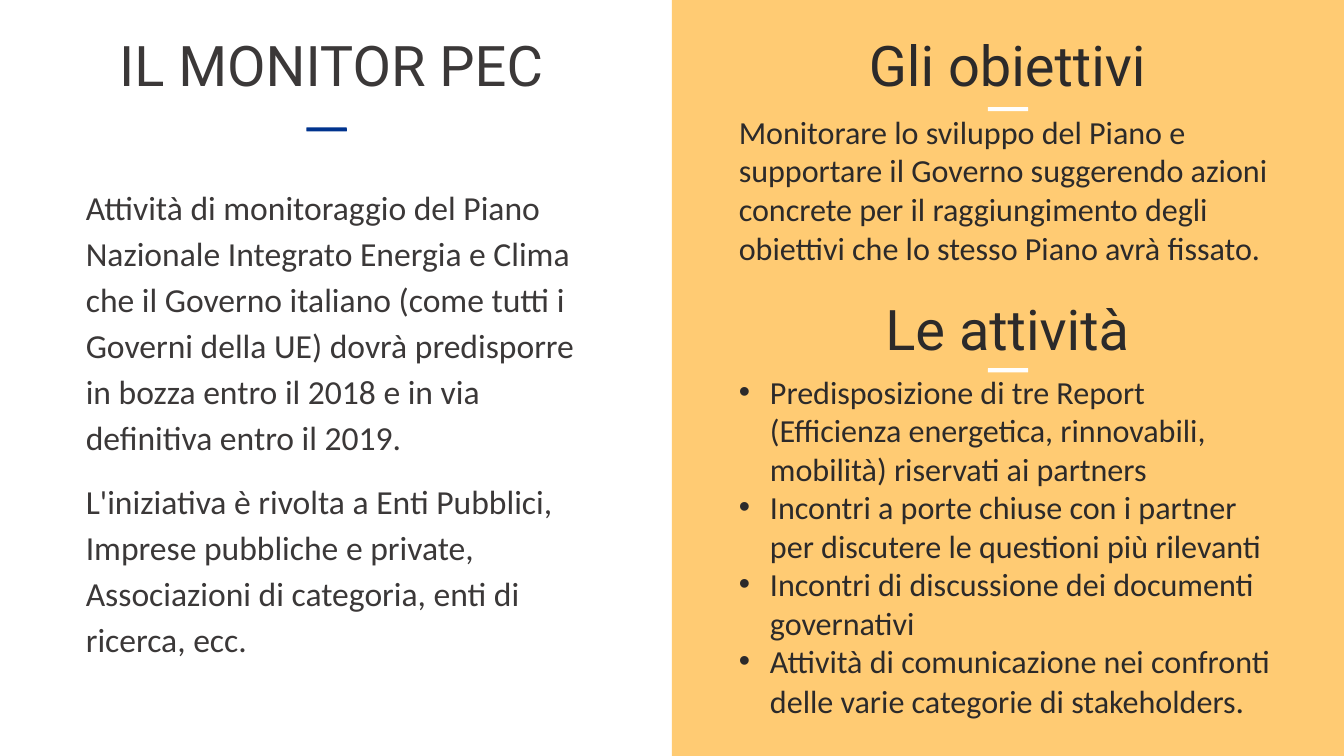
"""Builds the two-panel slide on the PEC monitor, its goals and its activities."""
from lxml import etree
from pptx import Presentation
from pptx.dml.color import RGBColor
from pptx.enum import shapes, text
from pptx.oxml import ns
from pptx.util import Pt

GREY, DARK, BLUE, WHITE, AMBER = "3B3838", "2C2A2A", "00338E", "FFFFFF", "FFC96C"
WIDTH, HEIGHT = 720, 405
HEADING_SIZE = (301.7, 44)
DASH_SIZE = (21.6, 2.2)

HEADINGS = [
    ("IL MONITOR PEC", 26.6, 13, GREY),
    ("Gli obiettivi", 388.8, 13, DARK),
    ("Le attività", 388.8, 154.1, DARK),
]
DASHES = [(164.2, 68.2, BLUE), (529.2, 57.4, WHITE), (529.2, 197.3, WHITE)]
MONITOR = [
    [("Attività di monitoraggio del Piano Nazionale Integrato Energia e Clima che il "
      "Governo italiano (come tutti i Governi della UE) dovrà predisporre in bozza "
      "entro il 2018 e in via definitiva entro il 2019.", 18)],
    [("L'iniziativa è rivolta a Enti Pubblici, Imprese pubbliche e private, "
      "Associazioni di categoria, enti di ricerca, ecc.", 18)],
]
GOALS = [
    [("Monitorare lo sviluppo del Piano e supportare il Governo suggerendo azioni "
      "concrete per il raggiungimento degli obiettivi che lo stesso Piano avrà "
      "fissato.", 17.2)],
]
ACTIVITIES = [
    [("Predisposizione di tre Report (Efficienza energetica, rinnovabili, mobilità) "
      "riservati ai partners", 17.2)],
    [("Incontri a porte chiuse con i partner per discutere le questioni più "
      "rilevanti", 17.2)],
    [("Incontri di discussione dei documenti governativi", 17.2)],
    [("Attività di comunicazione nei confronti delle varie categorie di "
      "stakeholders", 17.2), (".", 18)],
]


def color(value):
    return RGBColor.from_string(value)


def add_block(slide, box, fill, kind=shapes.MSO_SHAPE.RECTANGLE):
    block = slide.shapes.add_shape(kind, *map(Pt, box))
    block.shadow.inherit = False
    block.fill.solid()
    block.fill.fore_color.rgb = color(fill)
    block.line.fill.background()
    return block


def add_bullet(paragraph, indent=16.6):
    props = paragraph._p.get_or_add_pPr()
    props.set("marL", str(Pt(indent)))
    props.set("indent", str(-Pt(indent)))
    etree.SubElement(props, ns.qn("a:buFont"), typeface="Arial")
    etree.SubElement(props, ns.qn("a:buChar"), char="•")


def add_text(slide, box, paragraphs, ink, font="Calibri", align=text.PP_ALIGN.LEFT,
             insets=(7.2, 3.6), spacing=None, before=0, bullets=False):
    frame = slide.shapes.add_textbox(*map(Pt, box)).text_frame
    frame.word_wrap = True
    frame.margin_left = frame.margin_right = Pt(insets[0])
    frame.margin_top = frame.margin_bottom = Pt(insets[1])
    for index, runs in enumerate(paragraphs):
        paragraph = frame.add_paragraph() if index else frame.paragraphs[0]
        paragraph.alignment = align
        paragraph.line_spacing = spacing
        paragraph.space_before = Pt(before)
        if bullets:
            add_bullet(paragraph)
        for words, size in runs:
            run = paragraph.add_run()
            run.text = words
            run.font.name = font
            run.font.size = Pt(size)
            run.font.color.rgb = color(ink)


def main():
    deck = Presentation()
    deck.slide_width, deck.slide_height = Pt(WIDTH), Pt(HEIGHT)
    slide = deck.slides.add_slide(deck.slide_layouts[6])

    panel = add_block(slide, (WIDTH / 2, 0, WIDTH / 2, HEIGHT), AMBER)
    tint = panel._element.spPr.find(".//" + ns.qn("a:srgbClr"))
    etree.SubElement(tint, ns.qn("a:alpha"), val="95000")

    for left, top, fill in DASHES:
        dash = add_block(slide, (left, top, *DASH_SIZE), fill,
                         shapes.MSO_SHAPE.ROUNDED_RECTANGLE)
        dash.adjustments[0] = 0.12
    for title, left, top, ink in HEADINGS:
        add_text(slide, (left, top, *HEADING_SIZE), [[(title, 30)]], ink,
                 font="Roboto", align=text.PP_ALIGN.CENTER)

    add_text(slide, (38.9, 93.6, 284.4, 280.8), MONITOR, GREY, spacing=1.14, before=10)
    add_text(slide, (390.6, 57.6, 299.5, 89.3), GOALS, DARK, insets=(5.2, 2.6))
    add_text(slide, (388.8, 195.8, 301.7, 196.6), ACTIVITIES, DARK, bullets=True)
    deck.save("out.pptx")


if __name__ == "__main__":
    main()
